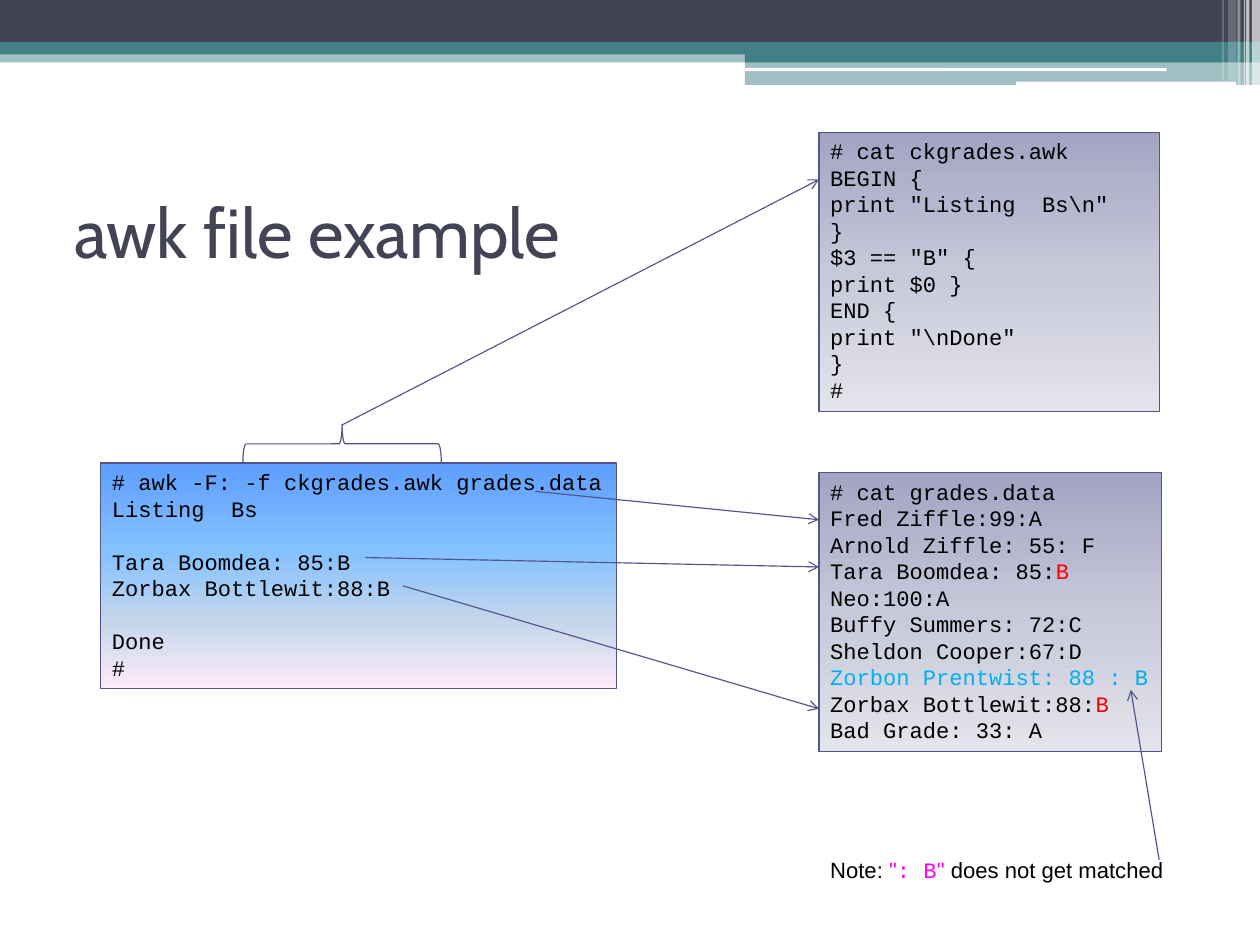
from lxml import etree
from pptx import Presentation
from pptx.dml.color import RGBColor
from pptx.enum.shapes import MSO_CONNECTOR, MSO_SHAPE
from pptx.enum.text import MSO_ANCHOR, MSO_AUTO_SIZE, PP_ALIGN
from pptx.oxml.ns import qn
from pptx.util import Inches, Pt

RECTANGLE = MSO_SHAPE.RECTANGLE
ROUNDED = MSO_SHAPE.ROUNDED_RECTANGLE
BRACE = MSO_SHAPE.LEFT_BRACE
STRAIGHT = MSO_CONNECTOR.STRAIGHT
LEFT = PP_ALIGN.LEFT
TOP, MIDDLE = MSO_ANCHOR.TOP, MSO_ANCHOR.MIDDLE
NO_AUTOFIT = MSO_AUTO_SIZE.NONE

WHITE = RGBColor(0xFF, 0xFF, 0xFF)
BLACK = RGBColor(0x00, 0x00, 0x00)
SLATE = RGBColor(0x42, 0x44, 0x56)
TEAL = RGBColor(0x43, 0x80, 0x86)
INDIGO = RGBColor(0x53, 0x54, 0x8A)
RED = RGBColor(0xFF, 0x00, 0x00)
CYAN = RGBColor(0x00, 0xB0, 0xF0)
MAGENTA = RGBColor(0xFF, 0x00, 0xFF)
LILAC_GRADIENT = [(0, RGBColor(0xA3, 0xA4, 0xC3)), (50, RGBColor(0xC7, 0xC8, 0xD9)),
                  (100, RGBColor(0xE4, 0xE4, 0xEC))]
SKY_GRADIENT = [(0, RGBColor(0x5E, 0x9E, 0xFF)), (40, RGBColor(0x85, 0xC2, 0xFF)),
                (70, RGBColor(0xC4, 0xD6, 0xEB)), (100, RGBColor(0xFF, 0xEB, 0xFA))]

# The slide is a grid of 40 columns by 30 rows
SLIDE_WIDTH, SLIDE_HEIGHT = Inches(11.11), Inches(8.33)
COLUMN, ROW = SLIDE_WIDTH / 40, SLIDE_HEIGHT / 30
LISTING_COLUMN = 26

CODE = "Courier New"
SCRIPT_LINES = ["# cat ckgrades.awk", "BEGIN {", 'print "Listing  Bs\\n"', "}",
                '$3 == "B" {', "print $0 }", "END {", 'print "\\nDone"', "}", "#"]
DATA_LINES = [
    "# cat grades.data", "Fred Ziffle:99:A", "Arnold Ziffle: 55: F",
    [("Tara Boomdea: 85:", {}), ("B", {"color": RED})],
    "Neo:100:A", "Buffy Summers: 72:C", "Sheldon Cooper:67:D",
    [("Zorbon Prentwist: 88 : B", {"color": CYAN})],
    [("Zorbax Bottlewit:88:", {}), ("B", {"color": RED})],
    "Bad Grade: 33: A"]
OUTPUT_LINES = ["# awk -F: -f ckgrades.awk grades.data", "Listing  Bs", "",
                "Tara Boomdea: 85:B", "Zorbax Bottlewit:88:B", "", "Done", "#"]
NOTE_LINES = [[("Note: ", {}), ('"', {"color": MAGENTA}),
               (": B", {"color": MAGENTA, "font": CODE}),
               ('"', {"color": MAGENTA}), (" does not get matched", {})]]

# Header parts: column, row, columns, rows, colour, opacity in percent
BANDS = [(0, 1.62, 40, 0.36, TEAL, 50), (0, 0, 40, 1.37, SLATE, 100),
         (0, 1.33, 40, 0.4, TEAL, 100), (23.65, 1.58, 16.35, 0.4, TEAL, 100),
         (23.65, 1.91, 16.35, 0.79, TEAL, 50)]
RULES = [(23.65, 2.16, 13.39, 0.1, WHITE, 100), (32.26, 2.59, 6.98, 0.14, WHITE, 100)]
STRIPES = [(39.74, 0, 0.26, 2.74, WHITE, 65), (39.56, 0, 0.1, 2.74, WHITE, 65),
           (39.49, 0, 0.04, 2.74, WHITE, 60), (39.28, 0, 0.1, 2.74, WHITE, 40),
           (38.99, 0, 0.26, 2.56, WHITE, 20), (38.81, 0, 0.04, 2.56, WHITE, 30)]

# Arrows: start column and row, end column and row
ARROWS = [(10.84, 13.5, LISTING_COLUMN, 5.7), (17, 15.6, LISTING_COLUMN, 16.5),
          (11.6, 17.7, LISTING_COLUMN, 18), (12.8, 18.6, LISTING_COLUMN, 22.5),
          (36.8, 27.3, 35.9, 21.9)]


def place(column, row, columns, rows):
    return (round(column * COLUMN), round(row * ROW),
            round(columns * COLUMN), round(rows * ROW))


def write_text(frame, lines, font=CODE, size=14, color=BLACK, anchor=TOP, wrap=False):
    frame.auto_size = NO_AUTOFIT
    frame.word_wrap = wrap
    frame.vertical_anchor = anchor
    for index, line in enumerate(lines):
        paragraph = frame.paragraphs[0] if index == 0 else frame.add_paragraph()
        paragraph.alignment = LEFT
        if not line:  # an empty line of terminal output keeps the code height
            end = etree.SubElement(paragraph._p, qn("a:endParaRPr"), sz=str(size * 100))
            etree.SubElement(end, qn("a:latin"), typeface=font)
            continue
        for text, changes in [(line, {})] if isinstance(line, str) else line:
            run = paragraph.add_run()
            run.text = text
            run.font.name = changes.get("font", font)
            run.font.size = Pt(size)
            run.font.color.rgb = changes.get("color", color)


def fill_gradient(shape, stops):
    shape.fill.gradient()
    shape.fill.gradient_angle = 270
    stop_list = shape._element.spPr.find(qn("a:gradFill")).find(qn("a:gsLst"))
    for stop in list(stop_list):
        stop_list.remove(stop)
    for position, color in stops:
        stop = etree.SubElement(stop_list, qn("a:gs"), pos=str(position * 1000))
        etree.SubElement(stop, qn("a:srgbClr"), val=str(color))


def outline(shape):
    shape.line.color.rgb = INDIGO
    shape.line.width = Pt(0.75)


def add_band(slide, kind, column, row, columns, rows, color, opacity):
    shape = slide.shapes.add_shape(kind, *place(column, row, columns, rows))
    shape.shadow.inherit = False
    shape.line.fill.background()
    shape.fill.solid()
    shape.fill.fore_color.rgb = color
    if opacity < 100:
        color_element = shape._element.spPr.find(qn("a:solidFill"))[0]
        etree.SubElement(color_element, qn("a:alpha"), val=str(opacity * 1000))


def add_listing(slide, area, stops, lines):
    shape = slide.shapes.add_shape(RECTANGLE, *place(*area))
    shape.shadow.inherit = False
    fill_gradient(shape, stops)
    outline(shape)
    write_text(shape.text_frame, lines)


def add_brace(slide, area):
    brace = slide.shapes.add_shape(BRACE, *place(*area))
    brace.rotation = 90
    brace.shadow.inherit = False
    brace.fill.background()
    outline(brace)


def add_arrow(slide, start_column, start_row, end_column, end_row):
    arrow = slide.shapes.add_connector(
        STRAIGHT, *place(start_column, start_row, end_column, end_row))
    outline(arrow)
    etree.SubElement(arrow.line._get_or_add_ln(), qn("a:tailEnd"), type="arrow")
    etree.SubElement(arrow._element.spPr, qn("a:effectLst"))


def main():
    presentation = Presentation()
    presentation.slide_width, presentation.slide_height = SLIDE_WIDTH, SLIDE_HEIGHT
    slide = presentation.slides.add_slide(presentation.slide_layouts[5])

    # Header decoration
    for kind, parts in ((RECTANGLE, BANDS), (ROUNDED, RULES), (RECTANGLE, STRIPES)):
        for part in parts:
            add_band(slide, kind, *part)

    # Title
    title = slide.shapes.title
    title.left, title.top, title.width, title.height = place(2, 5, 36, 4.68)
    write_text(title.text_frame, ["awk file example"], font="Cabin", size=44,
               color=SLATE, anchor=MIDDLE, wrap=True)

    # Listings: data, script and output
    add_listing(slide, (LISTING_COLUMN, 15, 10.87, 8.86), LILAC_GRADIENT, DATA_LINES)
    add_listing(slide, (LISTING_COLUMN, 4.2, 10.8, 8.86), LILAC_GRADIENT, SCRIPT_LINES)
    add_listing(slide, (3.2, 14.7, 16.38, 7.16), SKY_GRADIENT, OUTPUT_LINES)

    # Note
    note = slide.shapes.add_textbox(*place(LISTING_COLUMN, 27, 11.34, 1.22))
    write_text(note.text_frame, NOTE_LINES, font="Arial")

    # Brace and arrows
    add_brace(slide, (10.26, 10.94, 1.2, 6.3))
    for arrow in ARROWS:
        add_arrow(slide, *arrow)

    presentation.save("out.pptx")


if __name__ == "__main__":
    main()
